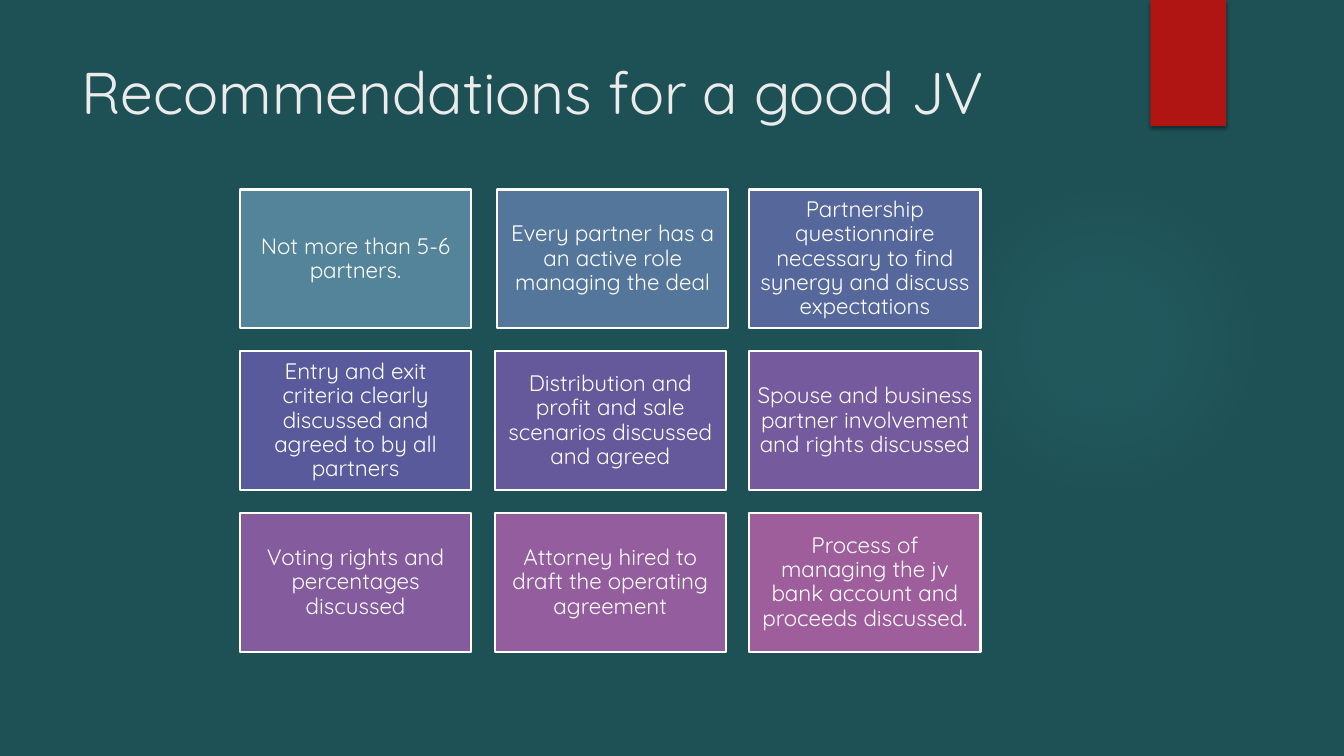
"""Build the slide of nine recommendations for a good joint venture."""
from lxml import etree
from pptx import Presentation
from pptx.dml.color import RGBColor
from pptx.enum.shapes import MSO_SHAPE
from pptx.enum.text import MSO_ANCHOR, MSO_AUTO_SIZE, PP_ALIGN
from pptx.oxml import parse_xml
from pptx.oxml.ns import nsdecls, qn
from pptx.util import Pt

TEAL = RGBColor(0x1E, 0x51, 0x55)
RED = RGBColor(0xB0, 0x15, 0x13)
PALE = RGBColor(0xEB, 0xEB, 0xEB)
WHITE = RGBColor(0xFF, 0xFF, 0xFF)
BLACK = RGBColor(0, 0, 0)
AQUA = RGBColor(0x50, 0xB9, 0xC1)

RECOMMENDATIONS = [
    ("Not more than 5-6 partners.", RGBColor(0x54, 0x84, 0x9A)),
    ("Every partner has a an active role managing the deal", RGBColor(0x55, 0x76, 0x9B)),
    ("Partnership questionnaire necessary to find synergy and discuss expectations",
     RGBColor(0x56, 0x68, 0x9B)),
    ("Entry and exit criteria clearly discussed and agreed to by all partners",
     RGBColor(0x58, 0x5A, 0x9C)),
    ("Distribution and profit and sale scenarios discussed and agreed",
     RGBColor(0x65, 0x59, 0x9C)),
    ("Spouse and business partner involvement and rights discussed",
     RGBColor(0x75, 0x5A, 0x9D)),
    ("Voting rights and percentages discussed", RGBColor(0x84, 0x5B, 0x9D)),
    ("Attorney hired to draft the operating agreement", RGBColor(0x93, 0x5D, 0x9E)),
    ("Process of managing the jv bank account and proceeds discussed.",
     RGBColor(0x9E, 0x5E, 0x9B)),
]
COLUMNS = 3
GRID_LEFT, GRID_TOP = 171.4, 135.4
COLUMN_STEP, ROW_STEP = 181.9, 115.6
CARD_WIDTH, CARD_HEIGHT = 165.2, 99.1
NUDGES = {1: 1.8}


class SlideBuilder:
    """Hold the style and the current slide."""

    font_name = "Quicksand"

    def __init__(self, slide):
        """Take the slide and colour its background."""
        self.slide = slide
        slide.background.fill.solid()
        slide.background.fill.fore_color.rgb = TEAL

    def set_text(self, frame, text, size, color, align, anchor):
        """Put one paragraph of text into a frame."""
        frame.text = text
        frame.word_wrap = True
        frame.auto_size = MSO_AUTO_SIZE.NONE
        frame.vertical_anchor = anchor
        paragraph = frame.paragraphs[0]
        paragraph.alignment = align
        paragraph.font.name = self.font_name
        paragraph.font.size = Pt(size)
        paragraph.font.color.rgb = color
        return paragraph

    def block(self, kind, left, top, width, height, fill):
        """Add a flat shape without an outline."""
        block = self.slide.shapes.add_shape(kind, Pt(left), Pt(top), Pt(width), Pt(height))
        block.shadow.inherit = False
        block.fill.solid()
        block.fill.fore_color.rgb = fill
        block.line.fill.background()
        return block

    def glow(self, left, top, size, color, stops):
        """Add a soft round light from (position, opacity) percentages."""
        glow = self.block(MSO_SHAPE.OVAL, left, top, size, size, color)
        stop_xml = "".join(
            f'<a:gs pos="{position * 1000}"><a:srgbClr val="{color}">'
            f'<a:alpha val="{opacity * 1000}"/></a:srgbClr></a:gs>'
            for position, opacity in stops)
        gradient = parse_xml(
            f'<a:gradFill {nsdecls("a")} rotWithShape="1"><a:gsLst>{stop_xml}</a:gsLst>'
            '<a:path path="circle"><a:fillToRect l="50000" t="50000" r="50000" b="50000"/>'
            '</a:path></a:gradFill>')
        properties = glow._element.spPr
        properties.replace(properties.find(qn("a:solidFill")), gradient)

    def ribbon(self, left, top, width, height):
        """Add the red tab with its drop shadow."""
        ribbon = self.block(MSO_SHAPE.RECTANGLE, left, top, width, height, RED)
        effects = ribbon._element.spPr.find(qn("a:effectLst"))
        shadow = etree.SubElement(effects, qn("a:outerShdw"), blurRad=str(Pt(3)),
                                  dist=str(Pt(2)), dir="5400000", rotWithShape="0")
        shade = etree.SubElement(shadow, qn("a:srgbClr"), val=str(BLACK))
        etree.SubElement(shade, qn("a:alpha"), val="45000")

    def title(self, text, left, top, width, height):
        """Place and format the title."""
        title = self.slide.shapes.title
        title.left, title.top, title.width, title.height = map(Pt, (left, top, width, height))
        self.set_text(title.text_frame, text, 42, PALE, PP_ALIGN.LEFT, MSO_ANCHOR.TOP)

    def card(self, text, fill, left, top):
        """Add one recommendation card."""
        card = self.block(MSO_SHAPE.RECTANGLE, left, top, CARD_WIDTH, CARD_HEIGHT, fill)
        card.line.color.rgb = WHITE
        card.line.width = Pt(1.5)
        frame = card.text_frame
        frame.margin_left = frame.margin_right = Pt(4.8)
        frame.margin_top = frame.margin_bottom = Pt(4.8)
        paragraph = self.set_text(frame, text, 16, WHITE, PP_ALIGN.CENTER, MSO_ANCHOR.MIDDLE)
        paragraph.line_spacing = 0.9


def main():
    """Build and save the presentation."""
    presentation = Presentation()
    presentation.slide_width, presentation.slide_height = Pt(960), Pt(540)
    builder = SlideBuilder(presentation.slides.add_slide(presentation.slide_layouts[5]))
    builder.glow(677.5, 131.8, 221.8, AQUA, [(0, 7), (36, 6), (69, 0), (100, 0)])
    builder.ribbon(821.8, 0, 54, 90)
    builder.title("Recommendations for a good JV", 51, 36, 795.6, 110.2)
    for index, (text, fill) in enumerate(RECOMMENDATIONS):
        row, column = divmod(index, COLUMNS)
        builder.card(text, fill,
                     GRID_LEFT + column * COLUMN_STEP + NUDGES.get(index, 0),
                     GRID_TOP + row * ROW_STEP)
    presentation.save("out.pptx")


if __name__ == "__main__":
    main()
